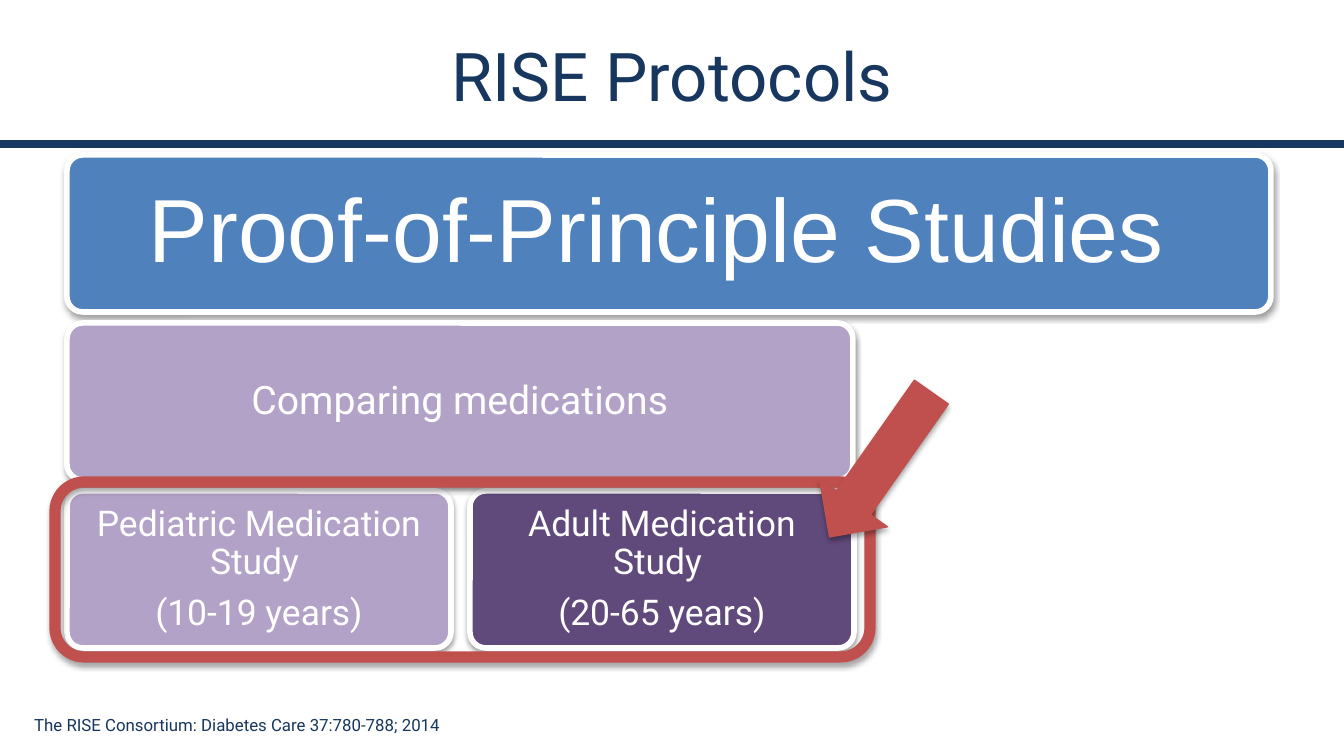
from lxml import etree
from pptx import Presentation
from pptx import util as u
from pptx.dml.color import RGBColor
from pptx.enum import shapes, text
from pptx.oxml import ns

EMU_PER_PX = 914400 / 134.4
NAVY, WHITE, RED = "17375E", "FFFFFF", "C0504D"
BLUE, LILAC, PURPLE = "4F81BD", "B3A2C7", "604A7B"

LEFT, TOP = 67, 155
ROW_PITCH, COLUMN_PITCH = 168, 403
BOX_HEIGHT = 157


def px(length):
    return u.Emu(round(length * EMU_PER_PX))


def color(hex_value):
    return RGBColor.from_string(hex_value)


def write_text(frame, content, *, size, fill, font="Roboto", align=text.PP_ALIGN.CENTER,
               line_spacing=None, space_after=None):
    """Write one paragraph per line of content."""
    frame.text = content
    for paragraph in frame.paragraphs:
        paragraph.alignment = align
        paragraph.line_spacing = line_spacing
        paragraph.space_after = space_after
        paragraph.font.name = font
        paragraph.font.size = u.Pt(size)
        paragraph.font.color.rgb = color(fill)


def add_shadow(shape, opacity, distance):
    """Give the shape a soft black shadow falling straight down."""
    shape.shadow.inherit = False
    effects = shape._element.spPr.find(ns.qn("a:effectLst"))
    shadow = etree.SubElement(effects, ns.qn("a:outerShdw"), blurRad=str(u.Pt(3.1)),
                              dist=str(u.Pt(distance)), dir="5400000", rotWithShape="0")
    black = etree.SubElement(shadow, ns.qn("a:srgbClr"), val="000000")
    etree.SubElement(black, ns.qn("a:alpha"), val=str(opacity * 1000))


def add_shape(slide, kind, box, *, line, line_width, fill=None, opacity=35, distance=1.8):
    shape = slide.shapes.add_shape(kind, *map(px, box))
    if fill:
        shape.fill.solid()
        shape.fill.fore_color.rgb = color(fill)
    else:
        shape.fill.background()
    shape.line.color.rgb = color(line)
    shape.line.width = u.Pt(line_width)
    add_shadow(shape, opacity, distance)
    return shape


def add_study_box(slide, row, column, width, content, *, fill, size, inset, font="Roboto"):
    box = (LEFT + column * COLUMN_PITCH, TOP + row * ROW_PITCH, width, BOX_HEIGHT)
    shape = add_shape(slide, shapes.MSO_SHAPE.ROUNDED_RECTANGLE, box, fill=fill,
                      line=WHITE, line_width=3, opacity=38, distance=1.6)
    shape.adjustments[0] = 0.1
    frame = shape.text_frame
    frame.word_wrap = True
    frame.vertical_anchor = text.MSO_ANCHOR.MIDDLE
    frame.margin_left = frame.margin_right = px(inset)
    frame.margin_top = frame.margin_bottom = px(inset)
    write_text(frame, content, size=size, fill=WHITE, font=font,
               line_spacing=0.9, space_after=u.Pt(round(size * 0.35)))


def add_title(slide, content):
    title = slide.shapes.title
    title.left, title.top, title.width, title.height = map(px, (0, 12, 1344, 126))
    title.text_frame.vertical_anchor = text.MSO_ANCHOR.MIDDLE
    write_text(title.text_frame, content, size=36, fill=NAVY)


def add_rule(slide, y):
    rule = slide.shapes.add_connector(shapes.MSO_CONNECTOR.STRAIGHT,
                                      px(0), px(y), px(1344), px(y))
    rule.line.color.rgb = color(NAVY)
    rule.line.width = u.Pt(4.5)
    etree.SubElement(rule._element.spPr, ns.qn("a:effectLst"))


def add_citation(slide, content):
    frame = slide.shapes.add_textbox(*map(px, (21, 708, 452, 34))).text_frame
    frame.word_wrap = False
    frame.auto_size = text.MSO_AUTO_SIZE.SHAPE_TO_FIT_TEXT
    write_text(frame, content, size=9, fill=NAVY, align=text.PP_ALIGN.LEFT)


def main():
    presentation = Presentation()
    presentation.slide_width, presentation.slide_height = px(1344), px(756)
    slide = presentation.slides.add_slide(presentation.slide_layouts[5])

    add_rule(slide, 144)
    add_title(slide, "RISE Protocols")

    add_study_box(slide, 0, 0, 1204, "Proof-of-Principle Studies ",
                  fill=BLUE, size=48, inset=32, font="Arial")
    add_study_box(slide, 1, 0, 786, "Comparing medications", fill=LILAC, size=21, inset=16)
    studies = [("Pediatric Medication Study \n(10-19 years)", LILAC),
               ("Adult Medication Study \n(20-65 years)", PURPLE)]
    for column, (content, fill) in enumerate(studies):
        add_study_box(slide, 2, column, 384, content, fill=fill, size=19, inset=15)

    add_citation(slide, "The RISE Consortium: Diabetes Care 37:780-788; 2014")

    add_shape(slide, shapes.MSO_SHAPE.ROUNDED_RECTANGLE, (55, 482, 815, 175),
              line=RED, line_width=6)
    arrow = add_shape(slide, shapes.MSO_SHAPE.DOWN_ARROW, (839, 376, 83, 177),
                      fill=RED, line=RED, line_width=0.75)
    arrow.rotation = 35.1

    presentation.save("out.pptx")


if __name__ == "__main__":
    main()
